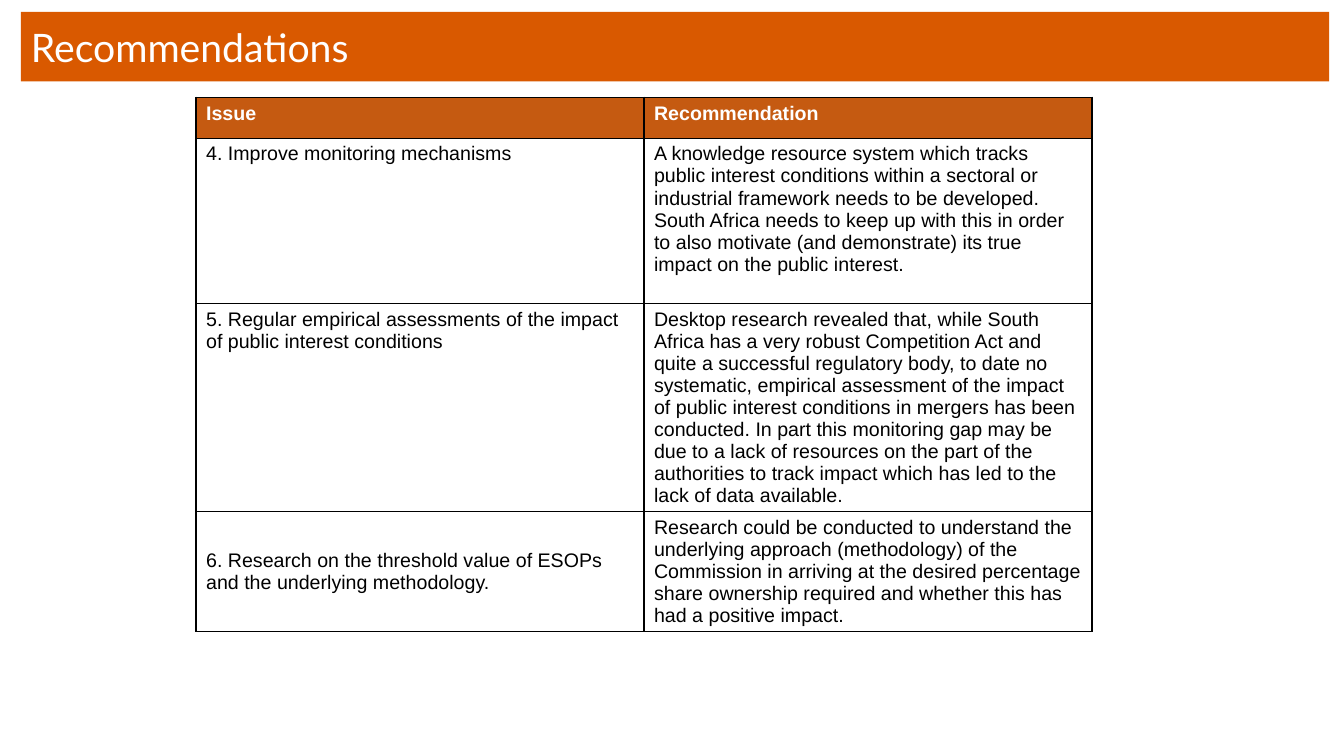
from pptx import Presentation
from pptx.dml.color import RGBColor
from pptx.enum.shapes import MSO_SHAPE
from pptx.enum.text import MSO_ANCHOR, PP_ALIGN
from pptx.oxml import parse_xml
from pptx.oxml.ns import nsdecls
from pptx.util import Cm, Pt

RECTANGLE = MSO_SHAPE.RECTANGLE
TOP, MIDDLE = MSO_ANCHOR.TOP, MSO_ANCHOR.MIDDLE
LEFT = PP_ALIGN.LEFT

# Content
TITLE = "Recommendations"
HEADINGS = ("Issue", "Recommendation")
ISSUES = [
    ("4. Improve monitoring mechanisms",
     "A knowledge resource system which tracks public interest conditions within a "
     "sectoral or industrial framework needs to be developed. South Africa needs to "
     "keep up with this in order to also motivate (and demonstrate) its true impact "
     "on the public interest."),
    ("5. Regular empirical assessments of the impact of public interest conditions",
     "Desktop research revealed that, while South Africa has a very robust Competition "
     "Act and quite a successful regulatory body, to date no systematic, empirical "
     "assessment of the impact of public interest conditions in mergers has been "
     "conducted. In part this monitoring gap may be due to a lack of resources on the "
     "part of the authorities to track impact which has led to the lack of data "
     "available."),
    ("6. Research on the threshold value of ESOPs and the underlying methodology.",
     "Research could be conducted to understand the underlying approach (methodology) "
     "of the Commission in arriving at the desired percentage share ownership required "
     "and whether this has had a positive impact."),
]

# Theme and layout, lengths in centimetres
THEME = {
    "banner": RGBColor.from_string("D95900"),
    "heading": RGBColor.from_string("C55A11"),
    "border": "000000",
    "border_width": Pt(1),
    "title_font": {"name": "Lato", "size": Pt(28), "bold": False,
                   "color": RGBColor.from_string("FFFFFF")},
    "heading_font": {"name": "Arial", "size": Pt(14), "bold": True,
                     "color": RGBColor.from_string("FFFFFF")},
    "body_font": {"name": "Arial", "size": Pt(14), "bold": False,
                  "color": RGBColor.from_string("000000")},
}
PAGE_SIZE = (33.87, 19.05)
BANNER = (0.53, 0.3, 32.97, 1.75)
TABLE_LEFT, TABLE_TOP = 4.94, 2.45
COLUMN_WIDTH = 11.29
ROW_HEIGHTS = (1.03, 4.16, 5.24, 3.03)
ROW_ANCHORS = (TOP, TOP, TOP, MIDDLE)


def write(frame, text, style):
    para = frame.paragraphs[0]
    para.alignment = LEFT
    span = para.add_run()
    span.text = text
    for key, value in style.items():
        if key == "color":
            span.font.color.rgb = value
        else:
            setattr(span.font, key, value)


def add_borders(cell):
    properties = cell._tc.get_or_add_tcPr()
    for index, side in enumerate(("lnL", "lnR", "lnT", "lnB")):
        properties.insert(index, parse_xml(
            f'<a:{side} {nsdecls("a")} w="{THEME["border_width"]}">'
            f'<a:solidFill><a:srgbClr val="{THEME["border"]}"/></a:solidFill>'
            f'</a:{side}>'))


def add_banner(page):
    box = page.shapes.add_shape(RECTANGLE, *map(Cm, BANNER))
    box.shadow.inherit = False
    box.fill.solid()
    box.fill.fore_color.rgb = THEME["banner"]
    box.line.fill.background()
    box.text_frame.word_wrap = True
    box.text_frame.vertical_anchor = MIDDLE
    write(box.text_frame, TITLE, THEME["title_font"])


def add_issue_table(page):
    rows = [HEADINGS, *ISSUES]
    columns = len(HEADINGS)
    table = page.shapes.add_table(
        len(rows), columns, Cm(TABLE_LEFT), Cm(TABLE_TOP),
        Cm(COLUMN_WIDTH * columns), Cm(sum(ROW_HEIGHTS))).table
    table.horz_banding = False
    for column in table.columns:
        column.width = Cm(COLUMN_WIDTH)
    for row_index, texts in enumerate(rows):
        table.rows[row_index].height = Cm(ROW_HEIGHTS[row_index])
        is_heading = row_index == 0
        style = THEME["heading_font" if is_heading else "body_font"]
        for column_index, text in enumerate(texts):
            cell = table.cell(row_index, column_index)
            cell.vertical_anchor = ROW_ANCHORS[row_index]
            if is_heading:
                cell.fill.solid()
                cell.fill.fore_color.rgb = THEME["heading"]
            else:
                cell.fill.background()
            add_borders(cell)
            write(cell.text_frame, text, style)


def main():
    deck = Presentation()
    deck.slide_width, deck.slide_height = map(Cm, PAGE_SIZE)
    page = deck.slides.add_slide(deck.slide_layouts[6])
    add_banner(page)
    add_issue_table(page)
    deck.save("out.pptx")


if __name__ == "__main__":
    main()
